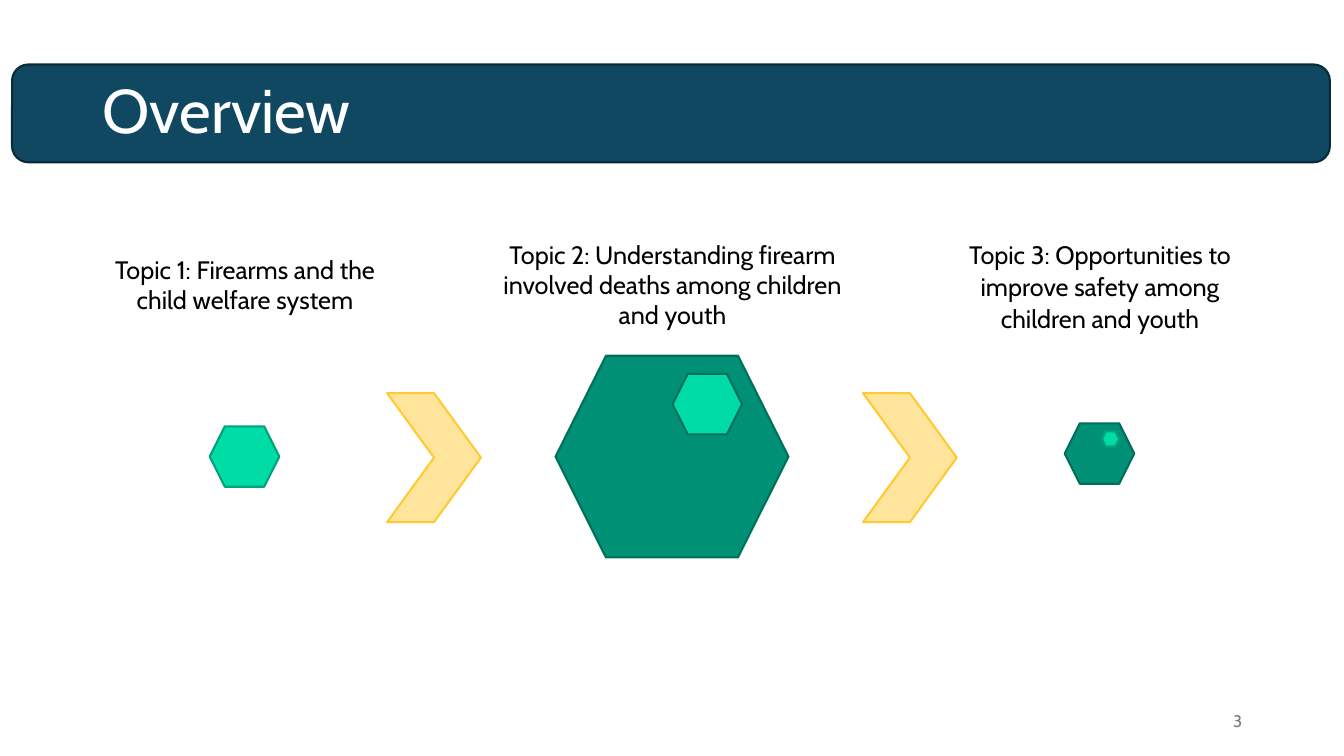
from dataclasses import dataclass

from pptx import Presentation
from pptx.dml.color import RGBColor
from pptx.enum.shapes import MSO_SHAPE
from pptx.enum.text import MSO_ANCHOR, PP_ALIGN
from pptx.slide import Slide
from pptx.util import Inches, Pt

BAR, HEX, ARROW = MSO_SHAPE.ROUNDED_RECTANGLE, MSO_SHAPE.HEXAGON, MSO_SHAPE.CHEVRON
TOP, MIDDLE = MSO_ANCHOR.TOP, MSO_ANCHOR.MIDDLE
LEFT, CENTER, RIGHT = PP_ALIGN.LEFT, PP_ALIGN.CENTER, PP_ALIGN.RIGHT


@dataclass(frozen=True)
class Theme:
    font: str = "Cabin"
    title: int = 44
    body: int = 18
    small: int = 12
    edge: float = 1.5
    white: str = "FFFFFF"
    black: str = "000000"
    gray: str = "797979"
    navy: str = "104862"
    navy_edge: str = "092A39"
    green: str = "009076"
    green_edge: str = "00705B"
    mint: str = "00DCA6"
    mint_edge: str = "00A27B"
    gold: str = "FFE59C"
    gold_edge: str = "FFCA33"


@dataclass(frozen=True)
class Box:
    left: float
    top: float
    width: float
    height: float

    def place(self) -> tuple[Inches, Inches, Inches, Inches]:
        return Inches(self.left), Inches(self.top), Inches(self.width), Inches(self.height)


@dataclass(frozen=True)
class Form:
    kind: MSO_SHAPE
    box: Box
    fill: str
    edge: str


@dataclass(frozen=True)
class Topic:
    text: str
    box: Box
    lead: float = 1.0
    after: int = 0


THEME = Theme()
BANNER = Form(BAR, Box(0.12, 0.64, 13.07, 0.97), THEME.navy, THEME.navy_edge)
TOPICS = (
    Topic("Topic 1: Firearms and the child welfare system", Box(0.96, 2.47, 2.94, 0.71)),
    Topic("Topic 2: Understanding firearm involved deaths among children and youth",
          Box(4.88, 2.32, 3.58, 1.01)),
    Topic("Topic 3: Opportunities to improve safety among children and youth",
          Box(9.34, 2.3, 3.14, 1.06), lead=1.07, after=8),
)
ARROWS = tuple(
    Form(ARROW, Box(left, 3.9, 0.93, 1.28), THEME.gold, THEME.gold_edge)
    for left in (3.84, 8.56)
)
CELLS = (
    Form(HEX, Box(5.51, 3.53, 2.31, 2), THEME.green, THEME.green_edge),
    Form(HEX, Box(6.67, 3.71, 0.69, 0.6), THEME.mint, THEME.green_edge),
    Form(HEX, Box(2.08, 4.23, 0.69, 0.6), THEME.mint, THEME.mint_edge),
    Form(HEX, Box(10.56, 4.2, 0.69, 0.6), THEME.green, THEME.green_edge),
    Form(HEX, Box(10.93, 4.28, 0.17, 0.15), THEME.mint, THEME.mint_edge),
)


def draw_form(slide: Slide, form: Form) -> None:
    """Draw a filled and outlined preset shape."""
    shape = slide.shapes.add_shape(form.kind, *form.box.place())
    shape.shadow.inherit = False
    shape.fill.solid()
    shape.fill.fore_color.rgb = RGBColor.from_string(form.fill)
    shape.line.color.rgb = RGBColor.from_string(form.edge)
    shape.line.width = Pt(THEME.edge)


def add_text(slide: Slide, text: str, box: Box, *, size: int = THEME.body,
             color: str = THEME.black, align: PP_ALIGN = CENTER,
             anchor: MSO_ANCHOR = TOP, lead: float = 1.0, after: int = 0) -> None:
    """Add a wrapped text box with one formatted paragraph."""
    frame = slide.shapes.add_textbox(*box.place()).text_frame
    frame.word_wrap = True
    frame.vertical_anchor = anchor
    para = frame.paragraphs[0]
    para.alignment = align
    para.line_spacing = lead
    para.space_after = Pt(after)
    run = para.add_run()
    run.text = text
    run.font.name = THEME.font
    run.font.size = Pt(size)
    run.font.color.rgb = RGBColor.from_string(color)


def main() -> None:
    """Build and save the overview slide."""
    deck = Presentation()
    deck.slide_width, deck.slide_height = Inches(13.33), Inches(7.5)
    slide = deck.slides.add_slide(deck.slide_layouts[6])
    draw_form(slide, BANNER)
    add_text(slide, "Overview", Box(0.92, 0.4, 11.5, 1.45), size=THEME.title,
             color=THEME.white, align=LEFT, anchor=MIDDLE, lead=0.9)
    for topic in TOPICS:
        add_text(slide, topic.text, topic.box, lead=topic.lead, after=topic.after)
    add_text(slide, "3", Box(9.42, 6.95, 3, 0.4), size=THEME.small,
             color=THEME.gray, align=RIGHT, anchor=MIDDLE)
    for form in ARROWS + CELLS:
        draw_form(slide, form)
    deck.save("out.pptx")


if __name__ == "__main__":
    main()
